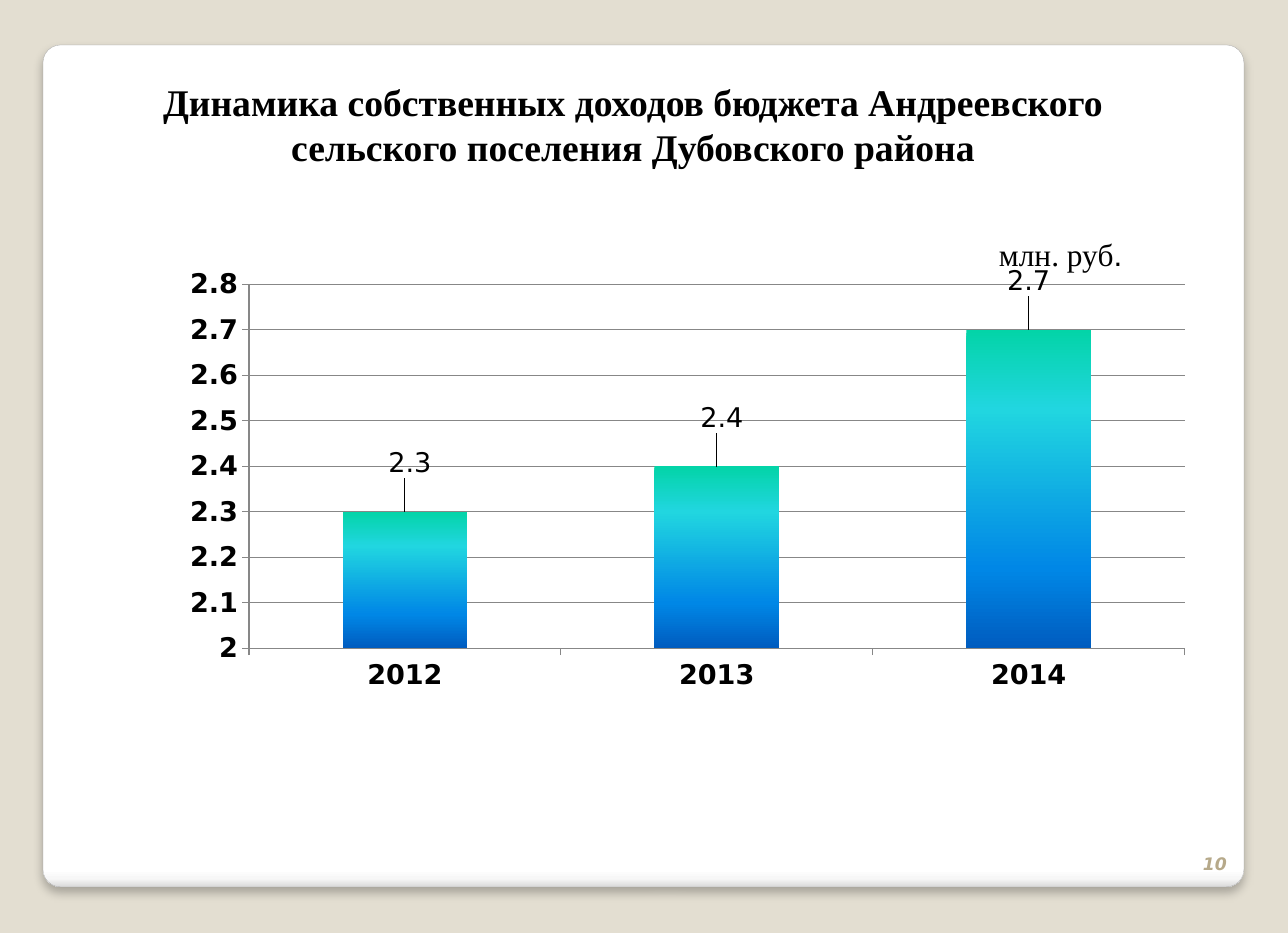
from lxml import etree
from pptx import Presentation
from pptx.chart.data import CategoryChartData
from pptx.dml.color import RGBColor
from pptx.enum.chart import XL_CHART_TYPE, XL_LABEL_POSITION, XL_TICK_MARK
from pptx.enum.shapes import MSO_SHAPE
from pptx.enum.text import MSO_ANCHOR, PP_ALIGN
from pptx.oxml.ns import qn
from pptx.util import Pt

PX = 914400 / 112.8

COLUMNS = XL_CHART_TYPE.COLUMN_CLUSTERED
OUTSIDE_END = XL_LABEL_POSITION.OUTSIDE_END
TICK_OUT = XL_TICK_MARK.OUTSIDE
ROUNDED = MSO_SHAPE.ROUNDED_RECTANGLE
TOP, BOTTOM = MSO_ANCHOR.TOP, MSO_ANCHOR.BOTTOM
LEFT, CENTER, RIGHT = PP_ALIGN.LEFT, PP_ALIGN.CENTER, PP_ALIGN.RIGHT

BLACK = RGBColor(0x00, 0x00, 0x00)
WHITE = RGBColor(0xFF, 0xFF, 0xFF)
BEIGE = RGBColor(0xE3, 0xDE, 0xD1)
SAND = RGBColor(0xB6, 0xA9, 0x8A)
CARD_EDGE = RGBColor(0xA4, 0xA4, 0xA4)
AXIS_GRAY = RGBColor(0x87, 0x87, 0x87)
CARD_STOPS = [(0, WHITE), (98, WHITE),
              (99, RGBColor(0xF7, 0xF7, 0xF7)), (100, RGBColor(0xDA, 0xDA, 0xDA))]
BAR_STOPS = [(0, RGBColor(0x03, 0xD4, 0xA8)), (25, RGBColor(0x21, 0xD6, 0xE0)),
             (75, RGBColor(0x00, 0x87, 0xE6)), (100, RGBColor(0x00, 0x5C, 0xBF))]

SERIF, SANS = "Times New Roman", "DejaVu Sans"
INCOME = {"2012": 2.3, "2013": 2.4, "2014": 2.7}
PLOT = {"x": 0.06, "y": 0.12, "w": 0.92, "h": 0.76}


def px(*lengths):
    return [round(length * PX) for length in lengths]


def add_child(parent, tag, **attributes):
    child = etree.SubElement(parent, qn(tag))
    for name, value in attributes.items():
        child.set(name, str(value))
    return child


def fill_downwards(fill, owner, stops):
    fill.gradient()
    fill.gradient_angle = 270
    stop_list = next(owner.iter(qn("a:gsLst")))
    for stop in list(stop_list):
        stop_list.remove(stop)
    for percent, color in stops:
        stop = add_child(stop_list, "a:gs", pos=percent * 1000)
        add_child(stop, "a:srgbClr", val=color)


def add_manual_layout(**values):
    layout = etree.Element(qn("c:layout"))
    manual = add_child(layout, "c:manualLayout")
    for tag, value in values.items():
        add_child(manual, f"c:{tag}", val=value)
    return layout


def add_card(slide):
    card = slide.shapes.add_shape(ROUNDED, *px(43, 45, 1201, 842))
    card.adjustments[0] = 0.021
    fill_downwards(card.fill, card._element, CARD_STOPS)
    card.line.color.rgb = CARD_EDGE
    card.line.width = Pt(0.16)
    # Soft shadow below the card
    card.shadow.inherit = False
    effects = next(card._element.iter(qn("a:effectLst")))
    shadow = add_child(effects, "a:outerShdw", blurRad=Pt(6), dist=Pt(4),
                       dir=5400000, algn="t", rotWithShape=0)
    add_child(add_child(shadow, "a:srgbClr", val=BLACK), "a:alpha", val=25000)


def write_text(shape, box, runs, size, color=BLACK, align=LEFT, anchor=TOP,
               bold=False, italic=False):
    shape.left, shape.top, shape.width, shape.height = px(*box)
    frame = shape.text_frame
    frame.word_wrap = True
    frame.vertical_anchor = anchor
    frame.margin_left = frame.margin_right = px(12)[0]
    frame.margin_top = frame.margin_bottom = px(7)[0]
    paragraph = frame.paragraphs[0]
    paragraph.alignment = align
    for text, font_name in runs:
        run = paragraph.add_run()
        run.text = text
        font = run.font
        font.name, font.size, font.color.rgb = font_name, Pt(size), color
        font.bold, font.italic = bold, italic


def add_label(slide, box, runs, size, **style):
    label = slide.shapes.add_textbox(*px(*box))
    write_text(label, box, runs, size, **style)


def style_axis(axis):
    axis.major_tick_mark = TICK_OUT
    axis.format.line.color.rgb = AXIS_GRAY
    axis.tick_labels.font.bold = True
    axis.tick_labels.font.size = Pt(17.3)


def add_income_chart(slide):
    data = CategoryChartData()
    data.categories = list(INCOME)
    data.add_series("Series 1", list(INCOME.values()))
    chart = slide.shapes.add_chart(COLUMNS, *px(188, 227, 1017, 479), data).chart
    chart.has_title = chart.has_legend = False
    chart.font.name, chart.font.size = SANS, Pt(17.3)
    chart.font.color.rgb = BLACK

    # Axes and grid
    years, millions = chart.category_axis, chart.value_axis
    style_axis(years)
    style_axis(millions)
    millions.minimum_scale, millions.maximum_scale = 2, 2.8
    millions.major_unit = 0.1
    millions.has_major_gridlines = True
    millions.major_gridlines.format.line.color.rgb = AXIS_GRAY

    # Plot area position
    plot_area = next(chart._chartSpace.iter(qn("c:plotArea")))
    for old_layout in plot_area.findall(qn("c:layout")):
        plot_area.remove(old_layout)
    plot_area.insert(0, add_manual_layout(
        layoutTarget="inner", xMode="edge", yMode="edge", **PLOT))

    # Bars with raised value labels
    plot = chart.plots[0]
    plot.gap_width = 150
    plot.vary_by_categories = False
    income = plot.series[0]
    fill_downwards(income.format.fill, income._element, BAR_STOPS)
    for index, shift in enumerate((0.005, 0.005, 0)):
        value_label = income.points[index].data_label
        value_label.font.size = Pt(17.3)
        value_label.position = OUTSIDE_END
    for label, shift in zip(income._element.iter(qn("c:dLbl")), (0.005, 0.005, 0)):
        label.insert(1, add_manual_layout(x=shift, y=-0.06))


def main():
    deck = Presentation()
    deck.slide_width, deck.slide_height = px(1288, 933)
    slide = deck.slides.add_slide(deck.slide_layouts[5])
    slide.background.fill.solid()
    slide.background.fill.fore_color.rgb = BEIGE

    add_card(slide)
    add_label(slide, (1175, 831, 64, 50), [("10", SANS)], 11, color=SAND,
              align=RIGHT, anchor=BOTTOM, bold=True, italic=True)
    add_income_chart(slide)

    # Title in front of the card
    title = slide.shapes.title
    slide.shapes._spTree.append(title._element)
    heading = ("Динамика собственных доходов бюджета Андреевского "
               "сельского поселения Дубовского района")
    write_text(title, (64, 72, 1138, 104), [(heading, SERIF)], 24,
               align=CENTER, bold=True)
    add_label(slide, (987, 228, 171, 51), [("млн. руб", SERIF), (".", "Arial")], 20)

    deck.save("out.pptx")


if __name__ == "__main__":
    main()
